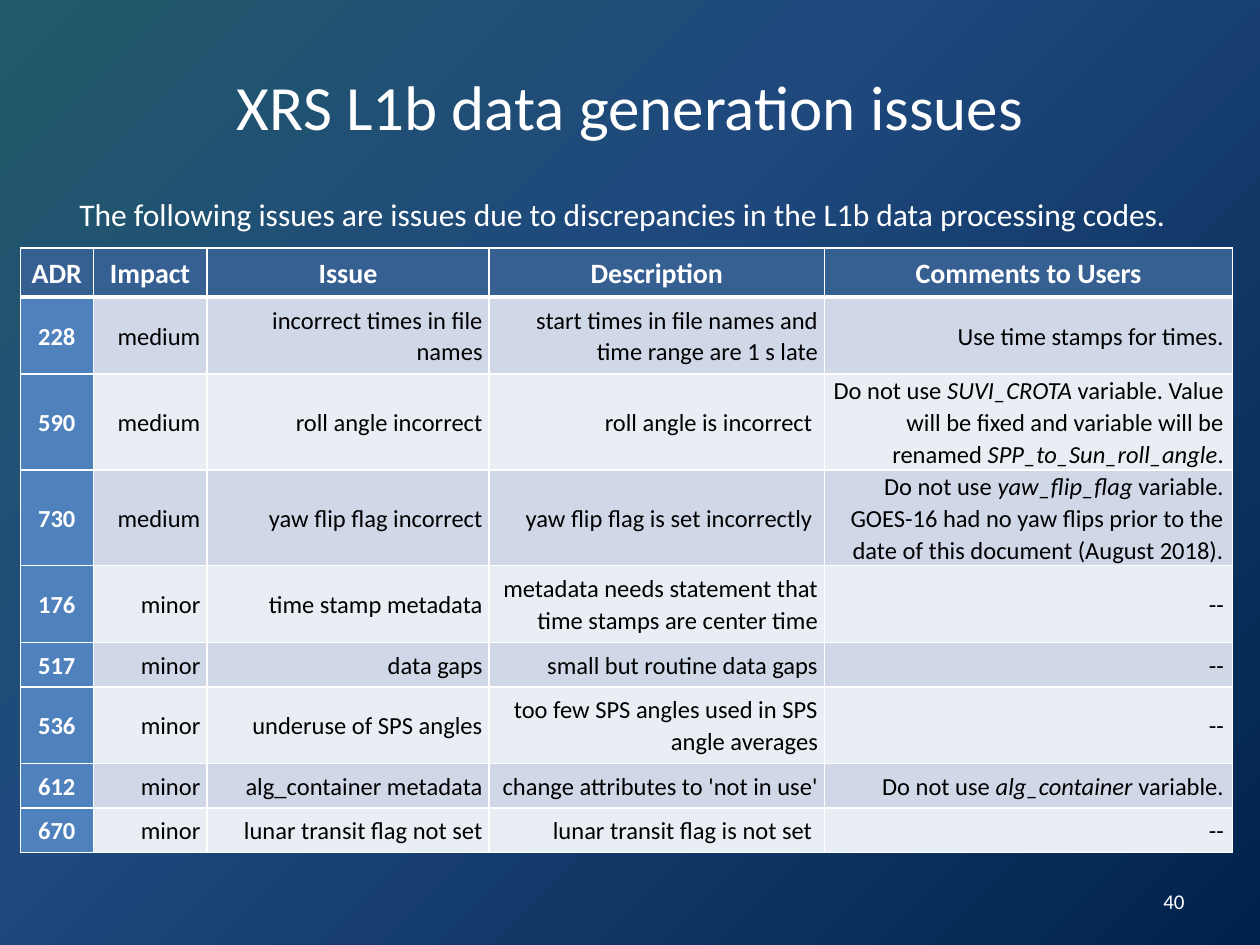
from dataclasses import dataclass

from lxml import etree
from pptx import Presentation
from pptx.dml.color import RGBColor
from pptx.enum.text import MSO_ANCHOR, PP_ALIGN
from pptx.oxml.ns import qn
from pptx.util import Cm, Pt

LEFT, MID, RIGHT = PP_ALIGN.LEFT, PP_ALIGN.CENTER, PP_ALIGN.RIGHT
CENTER = MSO_ANCHOR.MIDDLE
FONT = "Calibri"
HEX = {
    "white": "FFFFFF", "black": "000000", "head": "376092", "key": "4F81BD",
    "odd": "D0D8E8", "even": "E9EDF4",
    "teal": "215968", "blue": "1F497D", "navy": "00234D",
}
STOPS = [(0, "teal"), (40, "blue"), (100, "navy")]


@dataclass
class Issue:
    adr: str
    impact: str
    name: str
    detail: str
    note: str  # *stars* mark italics
    height: float

    def texts(self) -> list[str]:
        return [self.adr, self.impact, self.name, self.detail, self.note]


HEADS = ["ADR", "Impact", "Issue", "Description", "Comments to Users"]
WIDTHS = [1.47, 2.29, 5.69, 6.76, 8.23]
HEAD_HEIGHT = 0.99
ISSUES = [
    Issue("228", "medium", "incorrect times in file names",
          "start times in file names and time range are 1 s late",
          "Use time stamps for times.", 1.55),
    Issue("590", "medium", "roll angle incorrect", "roll angle is incorrect ",
          "Do not use *SUVI_CROTA* variable. Value will be fixed and variable "
          "will be renamed *SPP_to_Sun_roll_angle*.", 1.93),
    Issue("730", "medium", "yaw flip flag incorrect",
          "yaw flip flag is set incorrectly ",
          "Do not use *yaw_flip_flag* variable. GOES-16 had no yaw flips prior "
          "to the date of this document (August 2018).", 1.93),
    Issue("176", "minor", "time stamp metadata",
          "metadata needs statement that time stamps are center time",
          "--", 1.55),
    Issue("517", "minor", "data gaps", "small but routine data gaps",
          "--", 0.89),
    Issue("536", "minor", "underuse of SPS angles",
          "too few SPS angles used in SPS angle averages", "--", 1.55),
    Issue("612", "minor", "alg_container metadata",
          "change attributes to 'not in use'",
          "Do not use *alg_container* variable.", 0.89),
    Issue("670", "minor", "lunar transit flag not set",
          "lunar transit flag is not set ", "--", 0.89),
]


def write(frame, text: str, size: float, color: str = "white",
          align=LEFT, bold: bool = False, space: float = 1.0) -> None:
    """Fill a text frame; parts between stars become italic."""
    frame.word_wrap = True
    para = frame.paragraphs[0]
    para.alignment = align
    para.line_spacing = space
    for i, part in enumerate(text.split("*")):
        run = para.add_run()
        run.text = part
        font = run.font
        font.name, font.size, font.bold = FONT, Pt(size), bold
        font.italic = i % 2 == 1
        font.color.rgb = RGBColor.from_string(HEX[color])


def add_solid(parent, color: str) -> None:
    fill = etree.SubElement(parent, qn("a:solidFill"))
    etree.SubElement(fill, qn("a:srgbClr"), val=HEX[color])


def set_back(slide) -> None:
    """Radial gradient that spreads from the top left corner."""
    slide.background.fill.gradient()
    grad = slide.element.find(".//" + qn("a:gradFill"))
    for child in list(grad):
        grad.remove(child)
    stops = etree.SubElement(grad, qn("a:gsLst"))
    for pos, color in STOPS:
        stop = etree.SubElement(stops, qn("a:gs"), pos=str(pos * 1000))
        etree.SubElement(stop, qn("a:srgbClr"), val=HEX[color])
    shade = etree.SubElement(grad, qn("a:path"))
    shade.set("path", "circle")
    etree.SubElement(shade, qn("a:fillToRect"), r="100000", b="100000")


def set_edges(cell, top: float, base: float) -> None:
    props = cell._tc.get_or_add_tcPr()
    edges = {"lnL": 1, "lnR": 1, "lnT": top, "lnB": base}
    for i, (tag, width) in enumerate(edges.items()):
        line = etree.Element(qn("a:" + tag), w=str(Pt(width)))
        add_solid(line, "white")
        props.insert(i, line)


def fill_cell(cell, text: str, row: int, col: int) -> None:
    head, key = row == 0, col == 0
    last = col == len(HEADS) - 1 and not head
    cell.vertical_anchor = CENTER
    cell.margin_left = cell.margin_right = Cm(0.18 if last else 0.13)
    cell.margin_top = cell.margin_bottom = Cm(0 if last else 0.13)
    shade = "head" if head else "key" if key else "odd" if row % 2 else "even"
    cell.fill.solid()
    cell.fill.fore_color.rgb = RGBColor.from_string(HEX[shade])
    strong = head or key
    write(cell.text_frame, text, 16 if head else 14,
          color="white" if strong else "black",
          align=MID if strong else RIGHT, bold=strong, space=1.07)
    set_edges(cell, top=3 if row == 1 else 1, base=3 if head else 1)


def add_issues(slide) -> None:
    heights = [HEAD_HEIGHT] + [issue.height for issue in ISSUES]
    rows = [HEADS] + [issue.texts() for issue in ISSUES]
    table = slide.shapes.add_table(
        len(rows), len(HEADS), Cm(0.41), Cm(5), Cm(sum(WIDTHS)),
        Cm(sum(heights))).table
    for col, width in zip(table.columns, WIDTHS):
        col.width = Cm(width)
    for r, (texts, height) in enumerate(zip(rows, heights)):
        table.rows[r].height = Cm(height)
        for c, text in enumerate(texts):
            fill_cell(table.cell(r, c), text, r, c)


def add_label(slide, box: tuple[float, ...], text: str, size: float,
              align=LEFT):
    frame = slide.shapes.add_textbox(*map(Cm, box)).text_frame
    frame.vertical_anchor = CENTER
    write(frame, text, size, align=align)
    return frame


def main() -> None:
    deck = Presentation()
    deck.slide_width, deck.slide_height = Cm(25.4), Cm(19.05)
    slide = deck.slides.add_slide(deck.slide_layouts[5])
    set_back(slide)

    title = slide.shapes.title
    title.left, title.top = Cm(1.75), Cm(1.02)
    title.width, title.height = Cm(21.9), Cm(2.21)
    title.text_frame.vertical_anchor = CENTER
    write(title.text_frame, "XRS L1b data generation issues", 36, align=MID)

    add_label(slide, (18.2, 17.65, 5.93, 1.02), "40", 12, align=RIGHT)
    add_issues(slide)
    intro = add_label(
        slide, (1.6, 3.51, 22.05, 1.19),
        "The following issues are issues due to discrepancies in the L1b "
        "data processing codes.", 18)
    intro.margin_left = intro.margin_right = intro.margin_bottom = 0
    intro.margin_top = Cm(0.43)
    deck.save("out.pptx")


if __name__ == "__main__":
    main()
